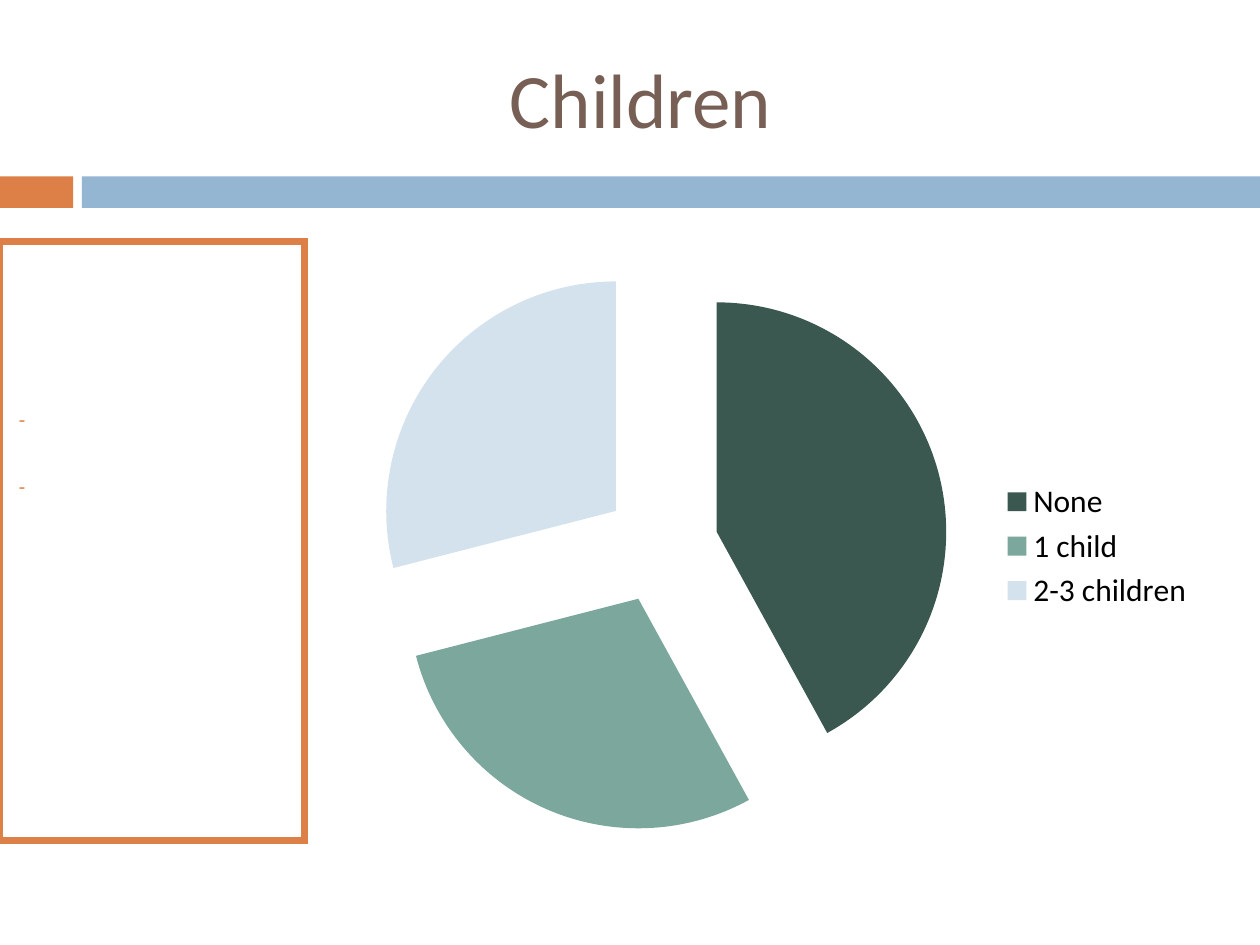
"""Build the Children slide: title, divider bands, side panel and exploded pie chart."""
from dataclasses import dataclass

from lxml import etree
from pptx import Presentation
from pptx import util as u
from pptx.chart.data import CategoryChartData
from pptx.dml.color import RGBColor
from pptx.enum import chart as charts, shapes, text
from pptx.oxml.ns import qn


@dataclass(frozen=True)
class Theme:
    font: str = "Calibri"
    title_size: int = 44
    legend_size: int = 18
    dash_size: int = 12
    border: int = 4
    brown: str = "775F55"
    orange: str = "DD8047"
    blue: str = "94B6D2"
    white: str = "FFFFFF"
    black: str = "000000"


@dataclass(frozen=True)
class Area:
    left: float
    top: float
    width: float
    height: float

    def lengths(self) -> tuple:
        return tuple(u.Inches(n) for n in (self.left, self.top, self.width, self.height))


@dataclass(frozen=True)
class Block:
    area: Area
    fill: str
    line: str | None = None


@dataclass(frozen=True)
class Slice:
    label: str
    percent: int
    color: str


THEME = Theme()
TITLE = Area(0.67, 0.3, 8.83, 0.95)
PIE = Area(2.58, 1.92, 7, 4.83)
BANDS = (
    Block(Area(0, 1.4, 0.58, 0.25), THEME.orange),
    Block(Area(0.65, 1.4, 9.35, 0.25), THEME.blue),
)
PANEL = Block(Area(0, 1.92, 2.42, 4.75), THEME.white, THEME.orange)
SLICES = (
    Slice("None", 42, "3A5750"),
    Slice("1 child", 29, "7BA79D"),
    Slice("2-3 children", 29, "D4E2ED"),
)
EXPLOSION = 25


def rgb(color: str) -> RGBColor:
    return RGBColor.from_string(color)


def add_block(page, block: Block):
    box = page.shapes.add_shape(shapes.MSO_SHAPE.RECTANGLE, *block.area.lengths())
    box.shadow.inherit = False
    box.fill.solid()
    box.fill.fore_color.rgb = rgb(block.fill)
    if block.line:
        box.line.color.rgb = rgb(block.line)
        box.line.width = u.Pt(THEME.border)
        outline = box._element.spPr.find(qn("a:ln"))
        etree.SubElement(outline, qn("a:miter"), lim="800000")
    else:
        box.line.fill.background()
    return box


def write(box, *lines: str, size: int, color: str, align=text.PP_ALIGN.LEFT,
          anchor=text.MSO_ANCHOR.TOP, gap: float = 0, left: float = 0.1, top: float = 0.05) -> None:
    frame = box.text_frame
    frame.word_wrap = True
    frame.vertical_anchor = anchor
    frame.margin_left, frame.margin_top = u.Inches(left), u.Inches(top)
    for index, line in enumerate(lines):
        para = frame.add_paragraph() if index else frame.paragraphs[0]
        para.alignment = align
        para.space_before = u.Pt(gap if index else 0)
        span = para.add_run()
        span.text = line
        span.font.name = THEME.font
        span.font.size = u.Pt(size)
        span.font.color.rgb = rgb(color)


def add_pie(page, area: Area, slices: tuple[Slice, ...]) -> None:
    data = CategoryChartData()
    data.categories = [piece.label for piece in slices]
    data.add_series("Series 1", [piece.percent for piece in slices])
    chart = page.shapes.add_chart(charts.XL_CHART_TYPE.PIE, *area.lengths(), data).chart
    chart.has_title = False
    chart.font.name = THEME.font
    chart.font.size = u.Pt(THEME.legend_size)
    chart.font.color.rgb = rgb(THEME.black)
    chart.has_legend = True
    chart.legend.position = charts.XL_LEGEND_POSITION.RIGHT
    chart.legend.include_in_layout = False
    plot = chart.plots[0]
    plot.vary_by_categories = True
    series = plot.series[0]
    for index, piece in enumerate(slices):
        fill = series.points[index].format.fill
        fill.solid()
        fill.fore_color.rgb = rgb(piece.color)
    explosion = etree.Element(qn("c:explosion"), val=str(EXPLOSION))
    series._element.find(qn("c:dPt")).addprevious(explosion)


def main() -> None:
    deck = Presentation()
    deck.slide_width, deck.slide_height = u.Inches(10), u.Inches(7.5)
    page = deck.slides.add_slide(deck.slide_layouts[6])
    for band in BANDS:
        add_block(page, band)
    write(page.shapes.add_textbox(*TITLE.lengths()), "Children", size=THEME.title_size,
          color=THEME.brown, align=text.PP_ALIGN.CENTER, anchor=text.MSO_ANCHOR.MIDDLE)
    write(add_block(page, PANEL), "-", "-", size=THEME.dash_size, color=THEME.orange,
          gap=23.7, left=0.15, top=1.31)
    add_pie(page, PIE, SLICES)
    deck.save("out.pptx")


if __name__ == "__main__":
    main()
